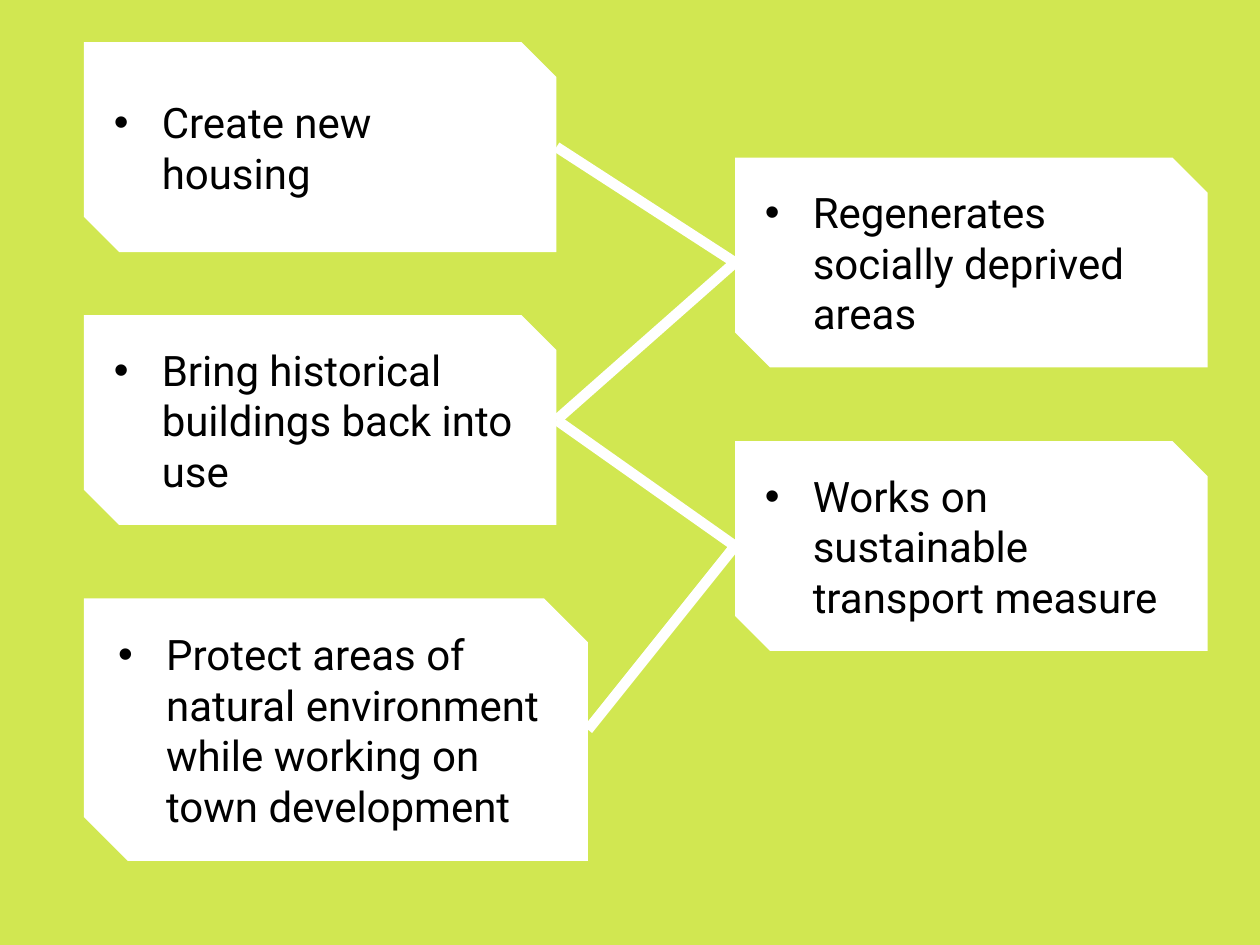
from dataclasses import dataclass
from itertools import pairwise

from lxml.etree import SubElement
from pptx import Presentation
from pptx.dml.color import RGBColor as Rgb
from pptx.enum.shapes import MSO_CONNECTOR as Link, MSO_SHAPE as Shape
from pptx.enum.text import MSO_ANCHOR as Anchor, PP_ALIGN as Align
from pptx.oxml.ns import qn
from pptx.util import Inches, Pt


@dataclass(frozen=True)
class Theme:
    back: str = "D1E751"
    card: str = "FFFFFF"
    ink: str = "000000"
    font: str = "Roboto"
    size: int = 24
    line: int = 6
    snip: float = 0.167
    indent: float = 0.38


def put_text(frame, text, *, font, size, color, indent):
    """Write one bulleted paragraph, centred vertically."""
    frame.word_wrap = True
    frame.vertical_anchor = Anchor.MIDDLE
    para = frame.paragraphs[0]
    para.alignment = Align.LEFT
    run = para.add_run()
    run.text = text
    run.font.name = font
    run.font.size = Pt(size)
    run.font.color.rgb = Rgb.from_string(color)
    props = para._p.get_or_add_pPr()
    props.set("marL", str(Inches(indent)))
    props.set("indent", str(-Inches(indent)))
    SubElement(props, qn("a:buFont"), typeface="Arial")
    SubElement(props, qn("a:buChar"), char="•")


class Board:
    """A slide on a grid of 120 columns by 90 rows."""

    COLS, ROWS = 120, 90

    def __init__(self, deck, theme):
        self.theme = theme
        self.slide = deck.slides.add_slide(deck.slide_layouts[6])
        self.col = deck.slide_width // self.COLS
        self.row = deck.slide_height // self.ROWS
        fill = self.slide.background.fill
        fill.solid()
        fill.fore_color.rgb = Rgb.from_string(theme.back)

    def card(self, text, col, row, wide=45, high=20):
        look = self.theme
        box = self.slide.shapes.add_shape(
            Shape.SNIP_2_DIAG_RECTANGLE,
            col * self.col, row * self.row, wide * self.col, high * self.row)
        box.adjustments[0] = 0
        box.adjustments[1] = look.snip
        box.shadow.inherit = False
        box.fill.solid()
        box.fill.fore_color.rgb = Rgb.from_string(look.card)
        box.line.fill.background()
        put_text(box.text_frame, text, font=look.font, size=look.size,
                 color=look.ink, indent=look.indent)
        return box

    def link(self, one, two):
        """Join the facing sides of two cards at mid height."""
        left, right = sorted((one, two), key=lambda box: box.left)
        line = self.slide.shapes.add_connector(
            Link.STRAIGHT,
            left.left + left.width, left.top + left.height // 2,
            right.left, right.top + right.height // 2)
        line.line.color.rgb = Rgb.from_string(self.theme.card)
        line.line.width = Pt(self.theme.line)
        SubElement(line._element.spPr, qn("a:effectLst"))


def main():
    deck = Presentation()
    deck.slide_width, deck.slide_height = Inches(10), Inches(7.5)
    board = Board(deck, Theme())

    # Cards, in zigzag order from top to bottom
    left, right = 8, 70
    cards = [
        board.card("Create new housing", left, 4),
        board.card("Regenerates socially deprived areas", right, 15),
        board.card("Bring historical buildings back into use", left, 30),
        board.card("Works on sustainable transport measure", right, 42),
        board.card("Protect areas of natural environment while working on "
                   "town development", left, 57, wide=48, high=25),
    ]

    # Lines from each card to the next
    for one, two in pairwise(cards):
        board.link(one, two)

    deck.save("out.pptx")


if __name__ == "__main__":
    main()
